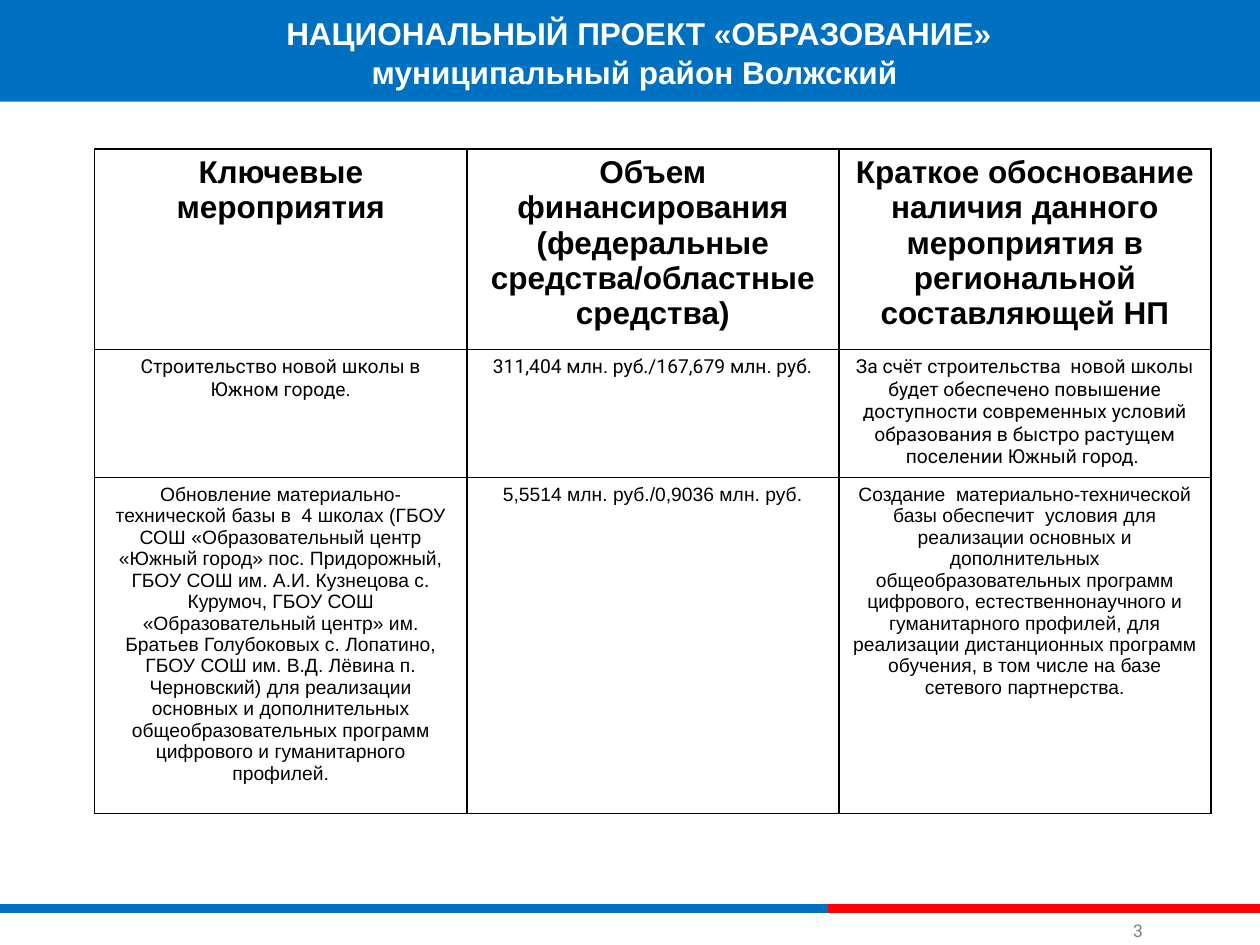
from lxml import etree
from pptx import Presentation
from pptx.dml.color import RGBColor
from pptx.enum.shapes import MSO_CONNECTOR, MSO_SHAPE
from pptx.enum.text import MSO_ANCHOR, PP_ALIGN
from pptx.oxml import parse_xml
from pptx.oxml.ns import nsdecls, qn
from pptx.util import Cm, Pt

CENTER = PP_ALIGN.CENTER
MIDDLE = MSO_ANCHOR.MIDDLE
BOTTOM = MSO_ANCHOR.BOTTOM
STRAIGHT = MSO_CONNECTOR.STRAIGHT
RECTANGLE = MSO_SHAPE.RECTANGLE

COLORS = {
    "blue": "0070C1",
    "red": "FF0000",
    "white": "FFFFFF",
    "black": "000000",
    "gray": "808080",
}
WIDTH, HEIGHT = 25.4, 19.05
TITLE = "НАЦИОНАЛЬНЫЙ ПРОЕКТ «ОБРАЗОВАНИЕ»\nмуниципальный район Волжский "
ROWS = [
    [
        "Ключевые мероприятия",
        "Объем финансирования (федеральные средства/областные средства)",
        "Краткое обоснование наличия данного мероприятия в региональной составляющей НП",
    ],
    [
        "Строительство новой школы в Южном городе.",
        "311,404 млн. руб./167,679 млн. руб.",
        "За счёт строительства  новой школы будет обеспечено повышение доступности "
        "современных условий образования в быстро растущем поселении Южный город. ",
    ],
    [
        "Обновление материально-технической базы в  4 школах (ГБОУ СОШ «Образовательный "
        "центр «Южный город» пос. Придорожный, ГБОУ СОШ им. А.И. Кузнецова с. Курумоч, "
        "ГБОУ СОШ «Образовательный центр» им. Братьев Голубоковых с. Лопатино, ГБОУ СОШ "
        "им. В.Д. Лёвина п. Черновский) для реализации основных и дополнительных "
        "общеобразовательных программ цифрового и гуманитарного профилей.",
        "5,5514 млн. руб./0,9036 млн. руб.",
        "Создание  материально-технической базы обеспечит  условия для реализации "
        "основных и дополнительных общеобразовательных программ цифрового, "
        "естественнонаучного и гуманитарного профилей, для реализации дистанционных "
        "программ обучения, в том числе на базе сетевого партнерства.",
    ],
]
ROW_STYLES = [
    (4.05, "Arial", 18, True),
    (2.58, "Roboto", 11, False),
    (6.77, "Arial", 11, False),
]


def color(name):
    return RGBColor.from_string(COLORS[name])


def format_text(frame, font, size, color_name, bold=False, align=CENTER):
    for para in frame.paragraphs:
        para.alignment = align
        for span in para.runs:
            span.font.name = font
            span.font.size = Pt(size)
            span.font.bold = bold
            span.font.color.rgb = color(color_name)


def set_margins(frame, margin):
    frame.margin_left = frame.margin_right = Cm(margin)
    frame.margin_top = frame.margin_bottom = Cm(margin)


def add_header(page, left, top, width, height):
    band = page.shapes.add_shape(RECTANGLE, Cm(left), Cm(top), Cm(width), Cm(height))
    band.shadow.inherit = False
    band.fill.solid()
    band.fill.fore_color.rgb = color("blue")
    band.line.fill.background()

    title = page.shapes.title
    band._element.addnext(title._element)
    title.left, title.top = Cm(left + 5.53), Cm(top + 0.23)
    title.width, title.height = Cm(14.7), Cm(1.8)
    frame = title.text_frame
    frame.text = TITLE
    frame.word_wrap = False
    frame.vertical_anchor = MIDDLE
    set_margins(frame, 0.13)
    format_text(frame, "Arial", 18, "white", bold=True)
    for para in frame.paragraphs:
        para.space_before = Pt(0)
        para.line_spacing = Pt(22)


def add_border(cell):
    properties = cell._tc.get_or_add_tcPr()
    for side in ("lnL", "lnR", "lnT", "lnB"):
        properties.append(parse_xml(
            f'<a:{side} {nsdecls("a")} w="{Pt(1)}"><a:solidFill>'
            f'<a:srgbClr val="{COLORS["black"]}"/></a:solidFill></a:{side}>'
        ))


def add_activities(page, left, top, width):
    height = sum(style[0] for style in ROW_STYLES)
    table = page.shapes.add_table(
        len(ROWS), len(ROWS[0]), Cm(left), Cm(top), Cm(width), Cm(height)
    ).table
    table.first_row = table.horz_banding = False
    for row, texts, (row_height, font, size, bold) in zip(table.rows, ROWS, ROW_STYLES):
        row.height = Cm(row_height)
        for cell, text in zip(row.cells, texts):
            cell.text_frame.text = text
            format_text(cell.text_frame, font, size, "black", bold)
            add_border(cell)
            cell.fill.solid()
            cell.fill.fore_color.rgb = color("white")


def add_footer(page, left, top, width):
    split = left + 16.69
    for start, end, name in ((left, split, "blue"), (split, left + width, "red")):
        rule = page.shapes.add_connector(STRAIGHT, Cm(start), Cm(top), Cm(end), Cm(top))
        rule.line.color.rgb = color(name)
        rule.line.width = Pt(5)
        etree.SubElement(rule._element.spPr, qn("a:effectLst"))

    number = page.shapes.add_textbox(Cm(left + 22.7), Cm(top + 0.16), Cm(0.48), Cm(0.64))
    frame = number.text_frame
    frame.text = "3"
    frame.word_wrap = False
    frame.vertical_anchor = BOTTOM
    set_margins(frame, 0.13)
    format_text(frame, "Roboto", 10, "gray")


def main():
    deck = Presentation()
    deck.slide_width, deck.slide_height = Cm(WIDTH), Cm(HEIGHT)
    page = deck.slides.add_slide(deck.slide_layouts.get_by_name("Title Only"))
    add_footer(page, 0, 18.31, WIDTH)
    add_header(page, 0, -0.08, WIDTH, 2.13)
    add_activities(page, 1.91, 3, 22.5)
    deck.save("out.pptx")


if __name__ == "__main__":
    main()
